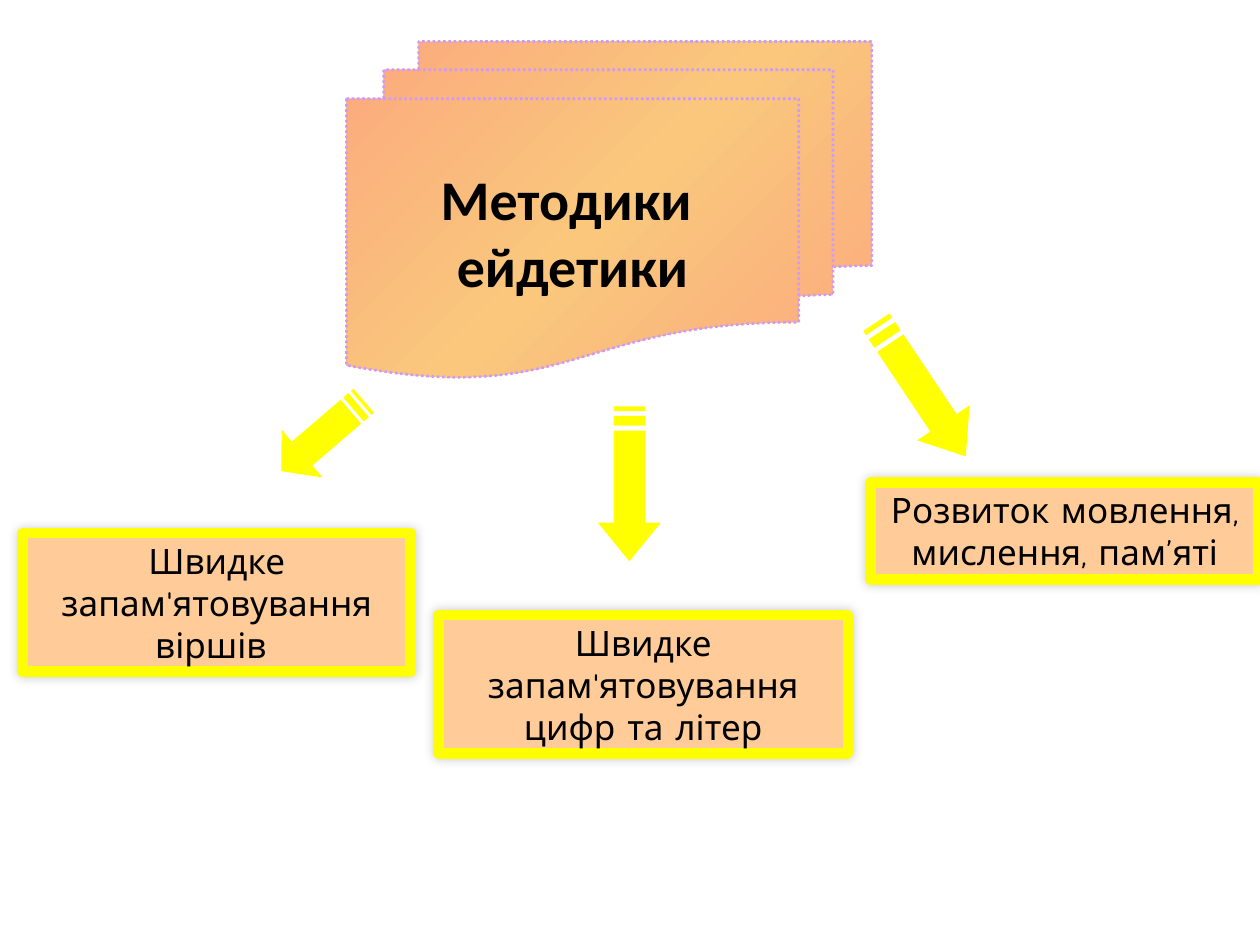
from copy import deepcopy

from lxml import etree
from pptx import Presentation
from pptx.dml.color import RGBColor
from pptx.enum.dml import MSO_LINE
from pptx.enum.shapes import MSO_SHAPE
from pptx.enum.text import MSO_ANCHOR, MSO_AUTO_SIZE, PP_ALIGN
from pptx.oxml.ns import qn
from pptx.util import Inches, Pt

MULTIDOCUMENT = MSO_SHAPE.FLOWCHART_MULTIDOCUMENT
RECTANGLE = MSO_SHAPE.RECTANGLE
DOTTED = MSO_LINE.ROUND_DOT
TOP, MIDDLE = MSO_ANCHOR.TOP, MSO_ANCHOR.MIDDLE
GROW = MSO_AUTO_SIZE.SHAPE_TO_FIT_TEXT
CENTER = PP_ALIGN.CENTER

BLACK = RGBColor(0x00, 0x00, 0x00)
YELLOW = RGBColor(0xFF, 0xFF, 0x00)
PEACH = RGBColor(0xFF, 0xCC, 0x99)
LILAC = RGBColor(0xCC, 0x99, 0xFF)
CORAL = RGBColor(0xFB, 0xA9, 0x7D)
AMBER = RGBColor(0xFA, 0xC7, 0x7D)

TITLE_FONT = {"name": "Calibri", "size": Pt(32), "bold": True}
LABEL_FONT = {"name": "Comic Neue", "size": Pt(20), "bold": False}


def add_box(page, kind, place, line_color, line_width):
    box = page.shapes.add_shape(kind, *[Inches(value) for value in place])
    box.shadow.inherit = False
    box.line.color.rgb = line_color
    box.line.width = Pt(line_width)
    return box


def write_lines(box, lines, font_format):
    frame = box.text_frame
    for index, line in enumerate(lines):
        para = frame.paragraphs[0] if index == 0 else frame.add_paragraph()
        para.alignment = CENTER
        span = para.add_run()
        span.text = line
        span.font.color.rgb = BLACK
        for name, value in font_format.items():
            setattr(span.font, name, value)


deck = Presentation()
deck.slide_width = Inches(10)
deck.slide_height = Inches(7.5)
page = deck.slides.add_slide(deck.slide_layouts[6])

title_box = add_box(page, MULTIDOCUMENT, (2.75, 0.33, 4.17, 2.67), LILAC, 1.5)
title_box.line.dash_style = DOTTED
title_box.fill.gradient()
title_box.fill.gradient_angle = 315
stop_list = next(title_box._element.iter(qn("a:gsLst")))
stop_list.append(deepcopy(stop_list[0]))
gradient = ((0, CORAL), (0.5, AMBER), (1, CORAL))
for stop, (position, color) in zip(title_box.fill.gradient_stops, gradient):
    stop.position = position
    stop.color.rgb = color
title_box.text_frame.word_wrap = False
title_box.text_frame.vertical_anchor = MIDDLE
write_lines(title_box, ["Методики ", "ейдетики"], TITLE_FONT)

arrow_height = 0.5
arrow_parts = [
    [(5 / 32, 0.25), (0.75, 0.25), (0.75, 0), (1, 0.5),
     (0.75, 1), (0.75, 0.75), (5 / 32, 0.75)],
    [(1 / 16, 0.25), (1 / 8, 0.25), (1 / 8, 0.75), (1 / 16, 0.75)],
    [(0, 0.25), (1 / 32, 0.25), (1 / 32, 0.75), (0, 0.75)],
]
arrows = [
    (2.13, 3.21, 0.86, 139.4),
    (4.38, 3.59, 1.23, 90),
    (6.67, 2.84, 1.28, 56.3),
]
for left, top, length, angle in arrows:
    builder = None
    for part in arrow_parts:
        points = [(Inches(left + x * length), Inches(top + y * arrow_height))
                  for x, y in part]
        if builder is None:
            builder = page.shapes.build_freeform(*points[0])
        else:
            builder.move_to(*points[0])
        builder.add_line_segments(points[1:], close=True)
    arrow = builder.convert_to_shape()
    arrow.rotation = angle
    arrow.shadow.inherit = False
    arrow.fill.solid()
    arrow.fill.fore_color.rgb = YELLOW
    arrow.line.fill.background()

labels = [
    ((0.18, 4.23, 3.08, 1.1), "Швидке запам'ятовування віршів "),
    ((3.48, 4.88, 3.25, 1.1), "Швидке запам'ятовування цифр та літер"),
    ((6.91, 3.83, 3.08, 0.77), "Розвиток мовлення, мислення, пам’яті"),
]
for place, text in labels:
    label = add_box(page, RECTANGLE, place, YELLOW, 6)
    label.fill.solid()
    label.fill.fore_color.rgb = PEACH
    effects = label._element.spPr.find(qn("a:effectLst"))
    shadow = etree.SubElement(effects, qn("a:outerShdw"), blurRad=str(Pt(6)),
                              dist="0", dir="0", rotWithShape="0")
    shade = etree.SubElement(shadow, qn("a:srgbClr"), val=str(BLACK))
    etree.SubElement(shade, qn("a:alpha"), val="20000")
    label.text_frame.word_wrap = True
    label.text_frame.auto_size = GROW
    label.text_frame.vertical_anchor = TOP
    write_lines(label, [text], LABEL_FONT)

deck.save("out.pptx")
